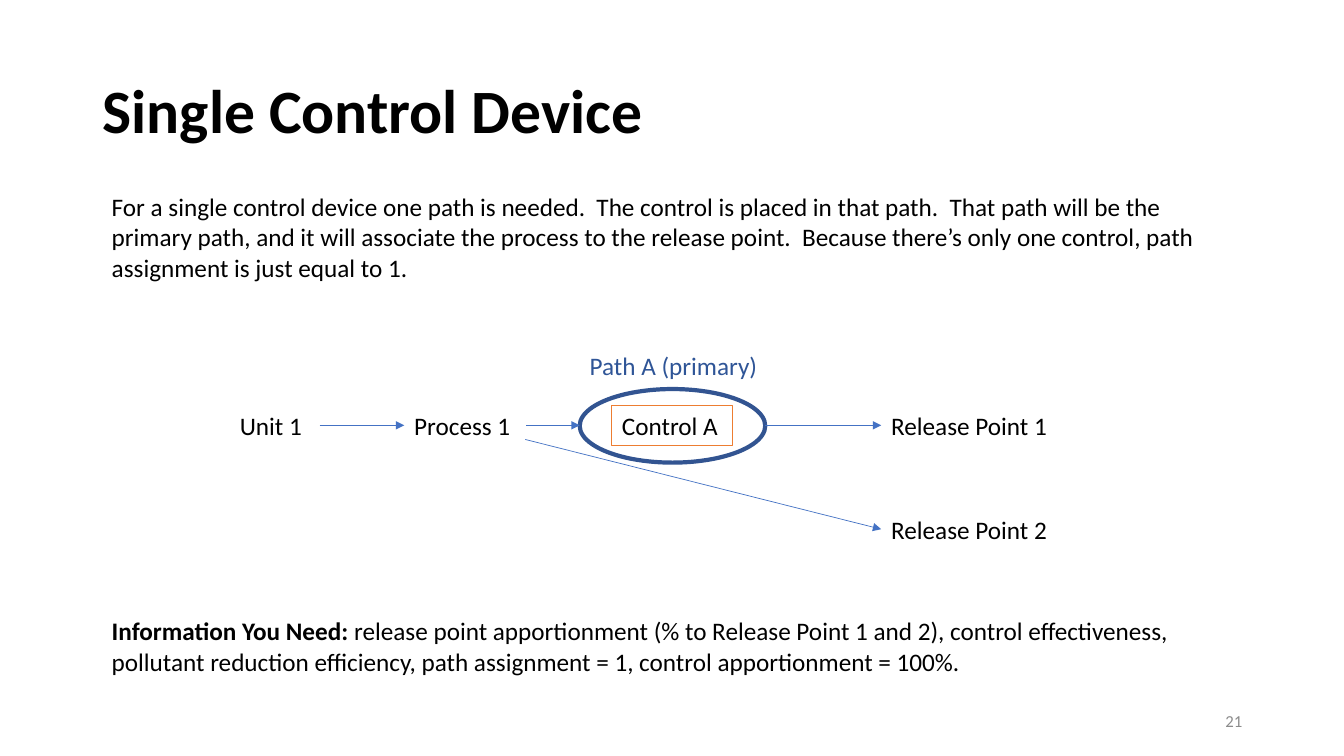
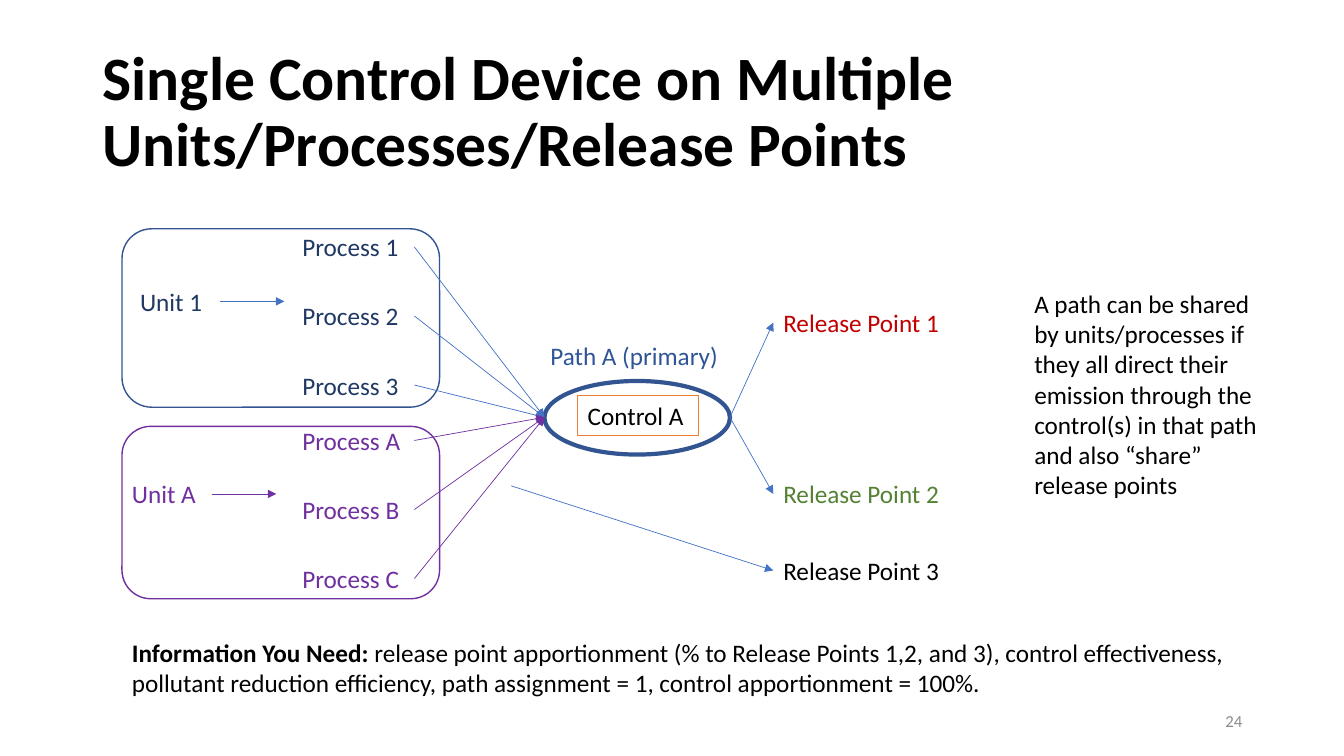
"""Build two slides on control paths for a single control device."""
from pptx import Presentation
from pptx.dml.color import RGBColor
from pptx.enum.shapes import MSO_CONNECTOR, MSO_SHAPE
from pptx.enum.text import MSO_ANCHOR, PP_ALIGN
from pptx.oxml.ns import qn
from pptx.util import Inches, Pt
from lxml.etree import SubElement

BLACK, GRAY, ORANGE = "000000", "8C8C8C", "ED7D31"
BLUE, PATH_BLUE, OVAL_BLUE, NAVY = "4472C4", "2F5597", "325491", "203864"
PURPLE, RED, GREEN = "7030A0", "C00000", "548235"
LEFT, RIGHT = 1, 3
LINE_HEIGHT = 0.4

rgb = RGBColor.from_string


def add_label(slide, left, top, width, text, color=BLACK, size=18, height=LINE_HEIGHT):
    label = slide.shapes.add_textbox(Inches(left), Inches(top), Inches(width), Inches(height))
    label.text_frame.word_wrap = True
    paragraph = label.text_frame.paragraphs[0]
    paragraph.text = text
    paragraph.font.name = "Calibri"
    paragraph.font.size = Pt(size)
    paragraph.font.color.rgb = rgb(color)
    return label


def add_arrow(slide, start, end, color=BLUE):
    arrow = slide.shapes.add_connector(MSO_CONNECTOR.STRAIGHT, 0, 0, 0, 0)
    if isinstance(start, tuple):
        arrow.begin_x, arrow.begin_y = map(Inches, start)
    else:
        arrow.begin_connect(start, RIGHT)
    if isinstance(end, tuple):
        arrow.end_x, arrow.end_y = map(Inches, end)
    else:
        arrow.end_connect(end, LEFT)
    arrow.line.color.rgb = rgb(color)
    arrow.line.width = Pt(0.5)
    SubElement(arrow.line._get_or_add_ln(), qn("a:tailEnd"), type="triangle")
    SubElement(arrow._element.spPr, qn("a:effectLst"))


prs = Presentation()
prs.slide_width, prs.slide_height = Inches(13.33), Inches(7.5)

pages = [
    ("Single Control Device", "21", (5.75, 3.86), (6.07, 4.02), (5.75, 3.43),
     (1.01, 6.06, 10.97), "Release Point 1 and 2"),
    ("Single Control Device on Multiple Units/Processes/Release Points", "24",
     (5.4, 3.78), (5.73, 3.92), (5.36, 3.33),
     (1.21, 6.27, 11.21), "Release Points 1,2, and 3"),
]
slides = []
for heading, number, oval_at, control_at, path_at, info_at, points in pages:
    slide = prs.slides.add_slide(prs.slide_layouts[6])
    slides.append(slide)

    title = add_label(slide, 0.92, 0.4, 11.5, heading, size=44, height=1.45)
    title.text_frame.vertical_anchor = MSO_ANCHOR.MIDDLE
    title.text_frame.paragraphs[0].font.bold = True
    title.text_frame.paragraphs[0].line_spacing = 0.9

    page_number = add_label(slide, 9.42, 6.95, 3, number, GRAY, 12)
    page_number.text_frame.vertical_anchor = MSO_ANCHOR.MIDDLE
    page_number.text_frame.paragraphs[0].alignment = PP_ALIGN.RIGHT

    control = add_label(slide, *control_at, 1.2, "Control A")
    control.line.color.rgb = rgb(ORANGE)
    control.line.width = Pt(0.75)
    add_label(slide, *path_at, 2.02, "Path A (primary)", PATH_BLUE)

    oval = slide.shapes.add_shape(
        MSO_SHAPE.OVAL, *map(Inches, oval_at), Inches(1.84), Inches(0.73))
    oval.shadow.inherit = False
    oval.fill.background()
    oval.line.color.rgb = rgb(OVAL_BLUE)
    oval.line.width = Pt(3)

    info = add_label(slide, *info_at, "Information You Need: ", height=0.71)
    info_line = info.text_frame.paragraphs[0]
    info_line.runs[0].font.bold = True
    info_line.add_run().text = (
        f"release point apportionment (% to {points}), control effectiveness, "
        "pollutant reduction efficiency, path assignment = 1, control apportionment = 100%.")

single, multiple = slides

add_label(
    single, 1.01, 1.85, 11.21,
    "For a single control device one path is needed.  The control is placed in that path.  "
    "That path will be the primary path, and it will associate the process to the release "
    "point.  Because there’s only one control, path assignment is just equal to 1.",
    height=1.01)
unit = add_label(single, 2.28, 4.02, 0.89, "Unit 1")
process = add_label(single, 4.01, 4.02, 1.21, "Process 1")
release_1 = add_label(single, 8.74, 4.02, 2.48, "Release Point 1")
release_2 = add_label(single, 8.74, 5.05, 2.48, "Release Point 2")
for start, end in [(unit, process), (process, (5.75, 4.22)),
                   ((7.59, 4.22), release_1), ((5.21, 4.36), release_2)]:
    add_arrow(single, start, end)

path_start, path_end = (5.4, 4.14), (7.24, 4.14)
groups = [
    ("Unit 1", "123", 2.27, 1.77, (1.29, 2.79), 2.25, OVAL_BLUE, NAVY, BLUE),
    ("Unit A", "ABC", 4.23, 1.71, (1.21, 4.7), 4.17, PURPLE, PURPLE, PURPLE),
]
for name, marks, top, height, unit_at, first_top, border, ink, arrow_color in groups:
    frame = multiple.shapes.add_shape(
        MSO_SHAPE.ROUNDED_RECTANGLE, Inches(1.21), Inches(top), Inches(3.15), Inches(height))
    frame.shadow.inherit = False
    frame.fill.background()
    frame.line.color.rgb = rgb(border)
    frame.line.width = Pt(1)
    unit = add_label(multiple, *unit_at, 0.89, name, ink)
    add_arrow(multiple, unit, (unit_at[0] + 1.53, unit_at[1] + LINE_HEIGHT / 2), arrow_color)
    for row, mark in enumerate(marks):
        process = add_label(
            multiple, 2.9, first_top + row * 0.685, 1.21, f"Process {mark}", ink)
        add_arrow(multiple, process, path_start, arrow_color)

releases = [(3, RED, path_end), (4.7, GREEN, path_end), (5.46, BLACK, (5.07, 4.82))]
for index, (top, ink, start) in enumerate(releases, 1):
    release = add_label(multiple, 7.67, top, 2.48, f"Release Point {index}", ink)
    add_arrow(multiple, start, release)

add_label(
    multiple, 10.16, 2.81, 2.44,
    "A path can be shared by units/processes if they all direct their emission through the "
    "control(s) in that path and also “share” release points",
    height=2.22)

prs.save("out.pptx")
